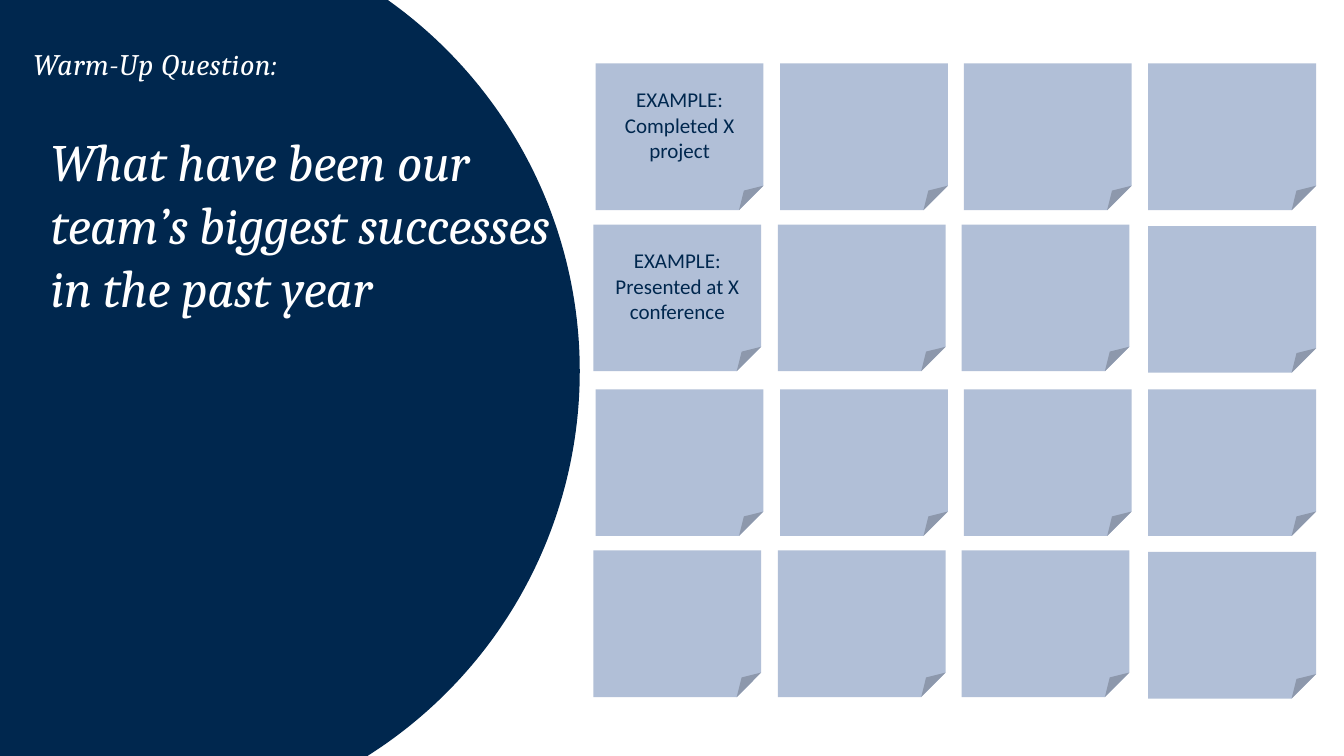
"""Build a warm-up slide: a question on a disc beside a grid of sticky notes."""
from dataclasses import dataclass

from pptx import Presentation
from pptx.dml.color import RGBColor
from pptx.enum.shapes import MSO_SHAPE
from pptx.enum.text import MSO_ANCHOR, MSO_AUTO_SIZE, PP_ALIGN
from pptx.util import Pt

DISC = MSO_SHAPE.FLOWCHART_CONNECTOR
FOLD = MSO_SHAPE.FOLDED_CORNER
TOP, MID = MSO_ANCHOR.TOP, MSO_ANCHOR.MIDDLE
LEFT, MIDST = PP_ALIGN.LEFT, PP_ALIGN.CENTER
GROW = MSO_AUTO_SIZE.SHAPE_TO_FIT_TEXT
PX = 9144
HEX = {"navy": "00274E", "note": "B1BFD7", "white": "FFFFFF"}
WORDS = {
    (0, 0): "EXAMPLE:\nCompleted X project",
    (1, 0): "EXAMPLE: Presented at X conference",
}


@dataclass
class Box:
    """Place and size in px."""
    x: int
    y: int
    w: int
    h: int

    def emu(self) -> list[int]:
        """Give left, top, width and height in EMU."""
        return [n * PX for n in (self.x, self.y, self.w, self.h)]


@dataclass
class Style:
    """Look of a run of text."""
    font: str
    size: float
    hue: str
    slant: bool = False
    space: int = 0


def ink(hue: str) -> RGBColor:
    """Look up a named colour."""
    return RGBColor.from_string(HEX[hue])


def write(frame, text: str, style: Style, align) -> None:
    """Set the text of a frame, then format its runs."""
    frame.text = text
    frame.word_wrap = True
    for para in frame.paragraphs:
        para.alignment = align
        for run in para.runs:
            font = run.font
            font.name, font.size = style.font, Pt(style.size)
            font.italic = style.slant
            font.color.rgb = ink(style.hue)
            if style.space:
                run._r.get_or_add_rPr().set("spc", str(style.space))


def draw(slide, kind, box: Box, hue: str):
    """Add a flat filled shape without an outline."""
    shape = slide.shapes.add_shape(kind, *box.emu())
    shape.shadow.inherit = False
    shape.fill.solid()
    shape.fill.fore_color.rgb = ink(hue)
    shape.line.fill.background()
    return shape


def label(shape, box: Box, text: str, style: Style, inset: int):
    """Place a left-aligned heading and return its paragraph."""
    shape.left, shape.top, shape.width, shape.height = box.emu()
    frame = shape.text_frame
    write(frame, text, style, LEFT)
    frame.auto_size = GROW
    frame.vertical_anchor = TOP
    frame.margin_left = frame.margin_right = frame.margin_bottom = 0
    frame.margin_top = inset * PX
    return frame.paragraphs[0]


def grid(slide) -> None:
    """Draw four rows of notes, with odd rows nudged slightly."""
    style = Style("Calibri", 20, "navy")
    for row in range(4):
        pair, odd = divmod(row, 2)
        for col in range(4):
            last = col == 3
            x = 788 + round(731 * col / 3) - (3 if odd and not last else 0)
            y = 84 + 431 * pair + 213 * odd + (2 if odd and last else 0)
            note = draw(slide, FOLD, Box(x, y, 222, 194), "note")
            if (row, col) in WORDS:
                write(note.text_frame, WORDS[row, col], style, MIDST)
                note.text_frame.vertical_anchor = MID


def main() -> None:
    """Build and save the slide."""
    deck = Presentation()
    deck.slide_width, deck.slide_height = 1778 * PX, 1000 * PX
    slide = deck.slides.add_slide(deck.slide_layouts[5])
    title = slide.shapes.title
    draw(slide, DISC, Box(-444, -112, 1211, 1206), "navy")

    box = Box(44, 34, 745, 70)
    intro = slide.shapes.add_textbox(*box.emu())
    para = label(intro, box, "Warm-Up Question:",
                 Style("Cambria", 28.4, "white", True, 50), 9)
    para.line_spacing, para.space_before = Pt(46.6), Pt(6.8)

    grid(slide)

    ask = "What have been our team’s biggest successes in the past year"
    para = label(title, Box(67, 169, 661, 338), ask,
                 Style("Cambria", 50, "white", True, -30), 2)
    para.space_before, para.space_after = Pt(1.1), Pt(13.3)
    slide.shapes._spTree.append(title._element)
    deck.save("out.pptx")


if __name__ == "__main__":
    main()
